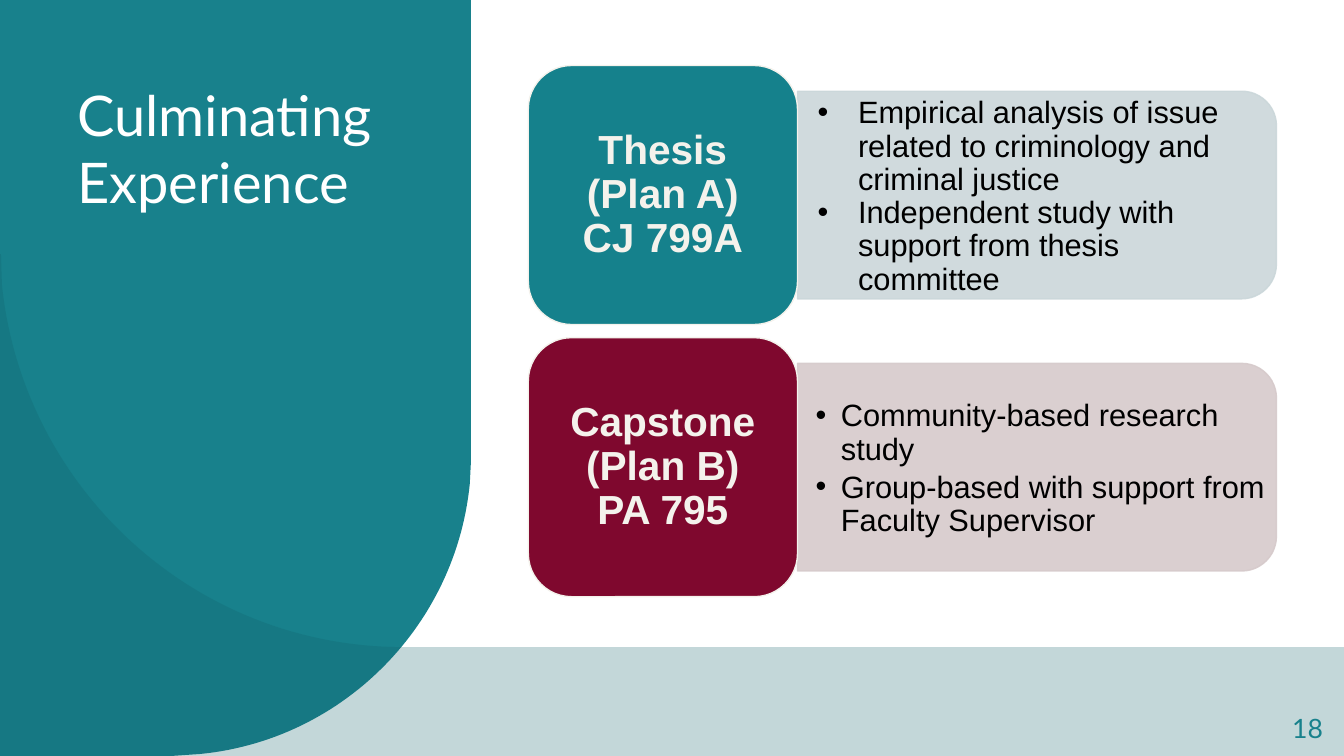
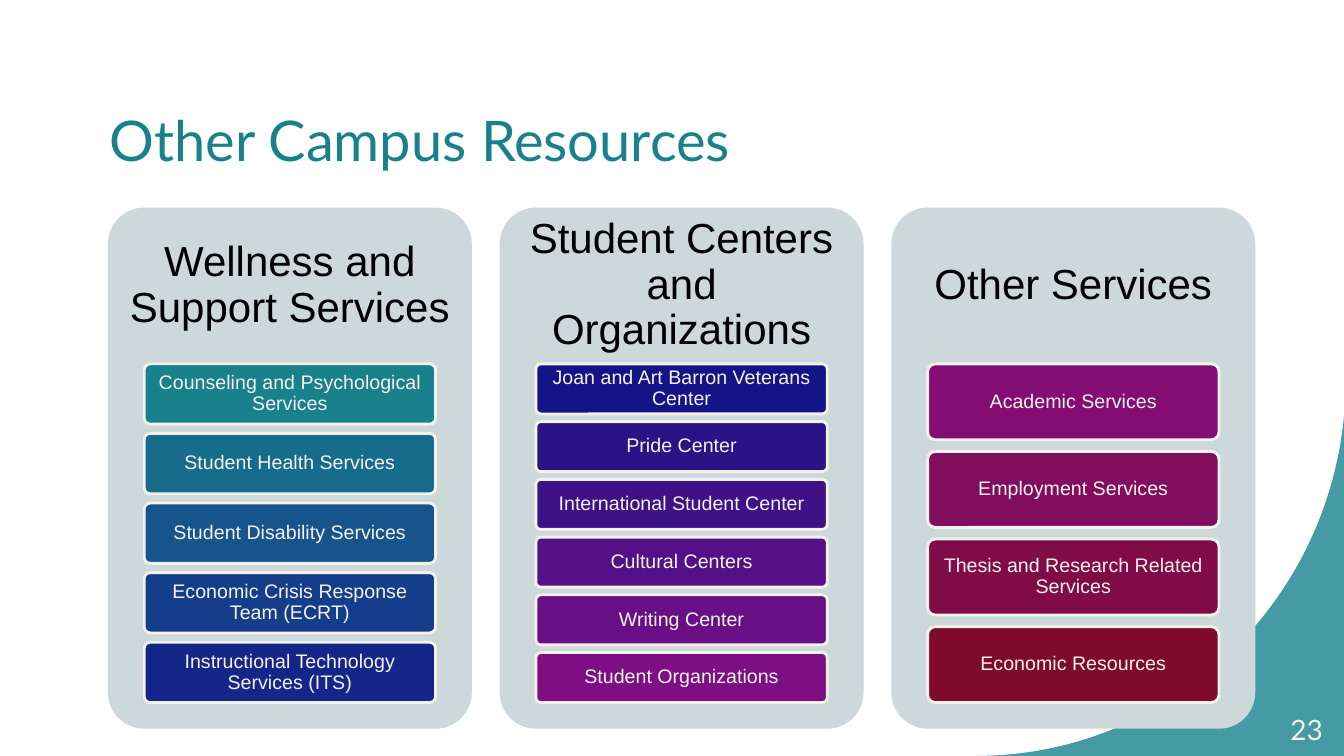
from dataclasses import dataclass, replace
from typing import Optional

from lxml.etree import SubElement
from pptx import Presentation
from pptx.dml.color import RGBColor
from pptx.enum.shapes import MSO_SHAPE as Preset
from pptx.enum.text import MSO_ANCHOR as Anchor, PP_ALIGN as Align
from pptx.oxml.ns import qn
from pptx.util import Inches, Pt

TEAL, WHITE, BLACK, CREAM = "18818C", "FFFFFF", "000000", "F4F2EC"
DEEP_TEAL, PANEL_GREY = "116069", "CCD8DA"
SLIDE_WIDTH, SLIDE_HEIGHT = 13.33, 7.5

Point = tuple[float, float]


@dataclass(frozen=True)
class Box:
    left: float
    top: float
    width: float
    height: float

    def lengths(self) -> list[int]:
        return [Inches(v) for v in (self.left, self.top, self.width, self.height)]


@dataclass(frozen=True)
class TextStyle:
    font: str
    size: float
    color: str
    bold: bool = False
    align: Align = Align.CENTER
    anchor: Anchor = Anchor.MIDDLE
    line_spacing: Optional[float] = 0.9
    space_before: float = 0
    inset: Point = (0.1, 0.05)
    bullet_indent: Optional[Point] = None


TITLE = TextStyle("Lato", 40, TEAL, align=Align.LEFT, line_spacing=None)
NUMBER = TextStyle("Lato", 20, CREAM, align=Align.RIGHT, line_spacing=None)
PLAN_LABEL = TextStyle("Arial", 29, CREAM, bold=True, inset=(0.12, 0.06))
PLAN_POINTS = TextStyle("Arial", 22, BLACK, align=Align.LEFT, inset=(0.09, 0.05))
GROUP_HEADING = TextStyle("Arial", 30, BLACK, inset=(0.12, 0.12))
SERVICE = TextStyle("Arial", 14, CREAM, inset=(0.04, 0.03))


@dataclass(frozen=True)
class Plan:
    label: list[str]
    color: str
    band_color: str
    points: list[str]
    points_left: float
    bullet_indent: Point
    space_before: float


@dataclass(frozen=True)
class ResourceGroup:
    heading: str
    services: dict[str, str]


PLANS = [
    Plan(["Thesis", "(Plan A)", "CJ 799A"], "15818C", "CBD7DA",
         ["Empirical analysis of issue related to criminology and criminal justice",
          "Independent study with support from thesis committee"],
         7.92, (0.5, -0.4), 0),
    Plan(["Capstone (Plan B)", "PA 795"], "7F082E", "D6CACB",
         ["Community-based research study",
          "Group-based with support from Faculty Supervisor"],
         8.0, (0.25, -0.25), 3.3),
]

RESOURCE_GROUPS = [
    ResourceGroup("Wellness and Support Services", {
        "Counseling and Psychological Services": TEAL,
        "Student Health Services": "176B8B",
        "Student Disability Services": "16548B",
        "Economic Crisis Response Team (ECRT)": "153E8A",
        "Instructional Technology Services (ITS)": "142789",
    }),
    ResourceGroup("Student Centers and Organizations", {
        "Joan and Art Barron Veterans Center": "151388",
        "Pride Center": "2A1287",
        "International Student Center": "3F1186",
        "Cultural Centers": "541086",
        "Writing Center": "680F85",
        "Student Organizations": "7D0E84",
    }),
    ResourceGroup("Other Services", {
        "Academic Services": "830D73",
        "Employment Services": "820C5D",
        "Thesis and Research Related Services": "810B46",
        "Economic Resources": "800A2F",
    }),
]


def paint(fill, color: str, opacity: int = 100) -> None:
    """Give a fill a solid colour, with opacity in percent."""
    fill.solid()
    fill.fore_color.rgb = RGBColor.from_string(color)
    if opacity < 100:
        color_element = fill._xPr.find(qn("a:solidFill"))[0]
        SubElement(color_element, qn("a:alpha"), val=str(opacity * 1000))


def finish(shape, color: str, opacity: int = 100,
           line_color: Optional[str] = None, line_width: float = 1) -> None:
    shape.shadow.inherit = False
    paint(shape.fill, color, opacity)
    if line_color is None:
        shape.line.fill.background()
    else:
        paint(shape.line.fill, line_color, opacity)
        shape.line.width = Pt(line_width)


def add_bullet(paragraph, indent: Point) -> None:
    properties = paragraph._p.get_or_add_pPr()
    margin, hanging = indent
    properties.set("marL", str(Inches(margin)))
    properties.set("indent", str(Inches(hanging)))
    bullet_color = SubElement(properties, qn("a:buClr"))
    SubElement(bullet_color, qn("a:srgbClr"), val=BLACK)
    SubElement(properties, qn("a:buFont"), typeface="Arial")
    SubElement(properties, qn("a:buChar"), char="•")


def write(shape, lines: list[str], style: TextStyle) -> None:
    frame = shape.text_frame
    frame.word_wrap = True
    frame.vertical_anchor = style.anchor
    frame.margin_left = frame.margin_right = Inches(style.inset[0])
    frame.margin_top = frame.margin_bottom = Inches(style.inset[1])
    frame.text = "\n".join(lines)
    for paragraph in frame.paragraphs:
        paragraph.alignment = style.align
        paragraph.space_before = Pt(style.space_before)
        if style.line_spacing is not None:
            paragraph.line_spacing = style.line_spacing
        if style.bullet_indent is not None:
            add_bullet(paragraph, style.bullet_indent)
        paragraph.font.name = style.font
        paragraph.font.size = Pt(style.size)
        paragraph.font.bold = style.bold
        paragraph.font.color.rgb = RGBColor.from_string(style.color)


def add_text(slide, box: Box, lines: list[str], style: TextStyle) -> None:
    write(slide.shapes.add_textbox(*box.lengths()), lines, style)


def add_rounded(slide, box: Box, radius: float, color: str,
                line_color: Optional[str] = None, line_width: float = 1):
    shape = slide.shapes.add_shape(Preset.ROUNDED_RECTANGLE, *box.lengths())
    shape.adjustments[0] = radius
    finish(shape, color, line_color=line_color, line_width=line_width)
    return shape


def curve(start: Point, control_1: Point, control_2: Point, end: Point,
          steps: int = 60) -> list[Point]:
    """Points along a cubic Bézier curve."""
    def at(t: float, axis: int) -> float:
        u = 1 - t
        return (u ** 3 * start[axis] + 3 * u * u * t * control_1[axis]
                + 3 * u * t * t * control_2[axis] + t ** 3 * end[axis])

    return [(at(i / steps, 0), at(i / steps, 1)) for i in range(steps + 1)]


def add_outline(slide, points: list[Point], color: str, opacity: int = 100) -> None:
    corners = [(Inches(x), Inches(y)) for x, y in points]
    builder = slide.shapes.build_freeform(*corners[0], scale=1.0)
    builder.add_line_segments(corners[1:], close=True)
    finish(builder.convert_to_shape(), color, opacity)


def add_slide(presentation):
    return presentation.slides.add_slide(presentation.slide_layouts[6])


def add_title_and_number(slide, title: str, title_box: Box, title_style: TextStyle,
                         number: int, number_style: TextStyle) -> None:
    add_text(slide, title_box, [title], title_style)
    add_text(slide, Box(12.46, 7.04, 0.76, 0.4), [str(number)], number_style)


def add_plan(slide, plan: Plan, top: float) -> None:
    label = Box(5.24, top, 2.67, 2.57)
    band_width, band_height = 4.75, 2.06
    middle = top + label.height / 2
    band_center = label.left + label.width + band_width / 2
    # The preset rounds its top corners, so it stands upright and turns right.
    band = slide.shapes.add_shape(Preset.ROUND_2_SAME_RECTANGLE, *Box(
        band_center - band_height / 2, middle - band_width / 2,
        band_height, band_width).lengths())
    band.rotation = 90
    band.adjustments[0] = 0.167
    finish(band, plan.band_color, 90, plan.band_color)
    points_style = replace(PLAN_POINTS, bullet_indent=plan.bullet_indent,
                           space_before=plan.space_before)
    add_text(slide, Box(plan.points_left, middle - 0.91, 4.65, 1.86),
             plan.points, points_style)
    write(add_rounded(slide, label, 0.167, plan.color, CREAM), plan.label, PLAN_LABEL)


def build_culminating_experience(presentation) -> None:
    slide = add_slide(presentation)
    side_curve = curve((4.66, 4.8), (4.52, 6.21), (3.4, 7.34), (1.99, 7.48))
    add_outline(slide, [(0, 0), (4.67, 0), (4.67, 4.6), *side_curve,
                        (1.7, SLIDE_HEIGHT), (0, SLIDE_HEIGHT)], TEAL)
    floor_curve = curve((0.02, 2.83), (0.23, 4.85), (1.93, 6.42), (4, 6.42))
    add_outline(slide, [(0, 2.52), (0.01, 2.52), *floor_curve, (SLIDE_WIDTH, 6.42),
                        (SLIDE_WIDTH, SLIDE_HEIGHT), (0, SLIDE_HEIGHT)], DEEP_TEAL, 25)
    add_title_and_number(
        slide, "Culminating Experience", Box(0.67, 0.75, 3.67, 4.25),
        replace(TITLE, color=WHITE, anchor=Anchor.TOP),
        18, replace(NUMBER, size=19, color=TEAL, line_spacing=0.9))
    for index, plan in enumerate(PLANS):
        add_plan(slide, plan, 0.65 + 2.7 * index)


def add_resource_group(slide, group: ResourceGroup, left: float) -> None:
    panel = Box(left, 2.06, 3.61, 5.17)
    heading = replace(panel, height=1.55)
    add_rounded(slide, panel, 0.1, PANEL_GREY)
    add_text(slide, heading, [group.heading], GROUP_HEADING)

    gap_ratio, stack_height = 0.154, 3.36
    count = len(group.services)
    height = stack_height / (count + gap_ratio * (count - 1))
    for index, (service, color) in enumerate(group.services.items()):
        top = heading.top + heading.height + index * height * (1 + gap_ratio)
        box = Box(left + 0.36, top, 2.89, height)
        write(add_rounded(slide, box, 0.1, color, CREAM, 2), [service], SERVICE)


def build_campus_resources(presentation) -> None:
    slide = add_slide(presentation)
    corner_curve = curve((9.68, SLIDE_HEIGHT), (11.58, SLIDE_HEIGHT),
                         (13.15, 6.02), (SLIDE_WIDTH, 4.13))
    add_outline(slide, [*corner_curve, (SLIDE_WIDTH, SLIDE_HEIGHT)], TEAL, 80)
    add_title_and_number(slide, "Other Campus Resources",
                         Box(0.99, 0.65, 10.84, 1.45), TITLE, 23, NUMBER)
    for index, group in enumerate(RESOURCE_GROUPS):
        add_resource_group(slide, group, 1.07 + 3.885 * index)


def main() -> None:
    presentation = Presentation()
    presentation.slide_width = Inches(SLIDE_WIDTH)
    presentation.slide_height = Inches(SLIDE_HEIGHT)
    build_culminating_experience(presentation)
    build_campus_resources(presentation)
    presentation.save("out.pptx")


if __name__ == "__main__":
    main()
